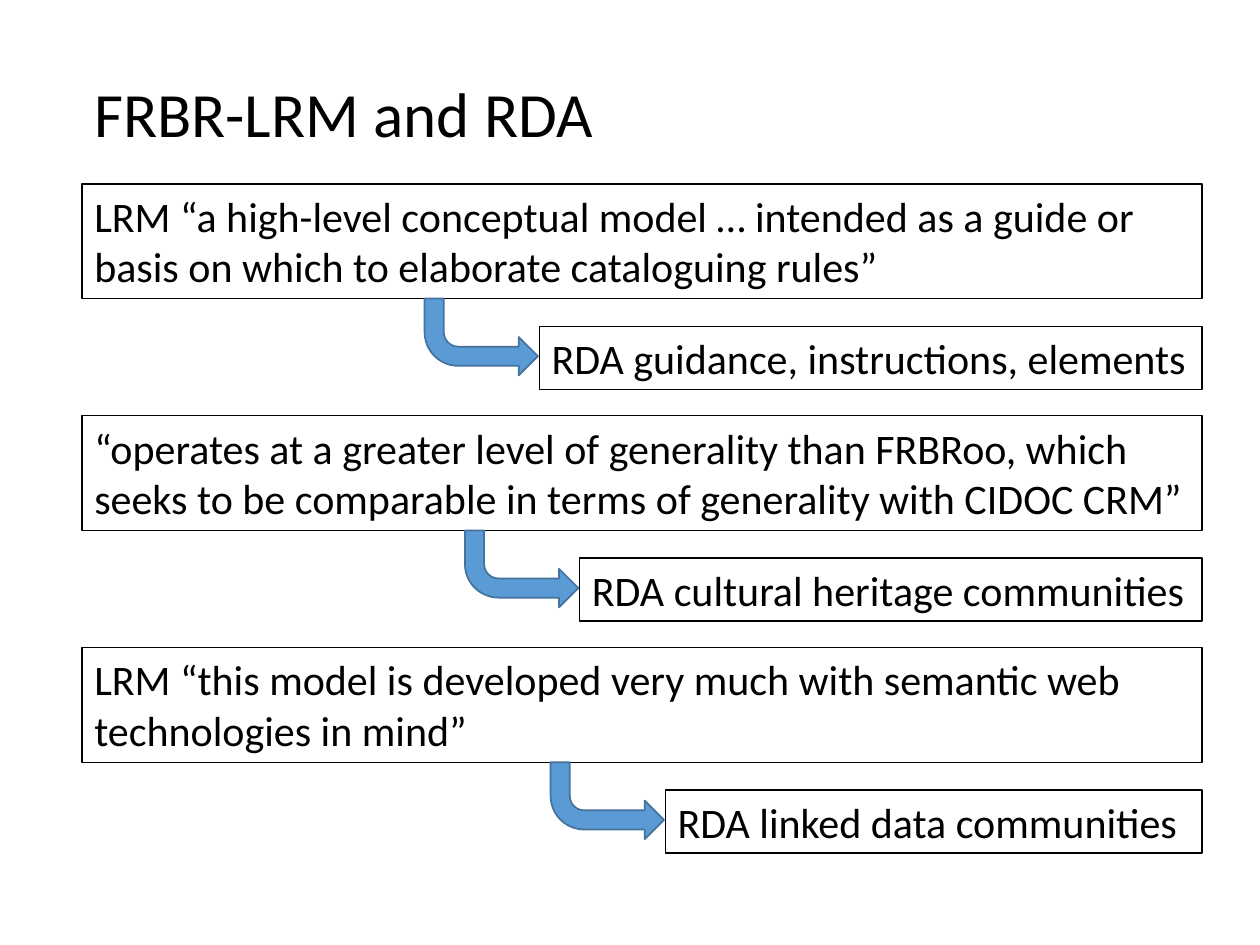
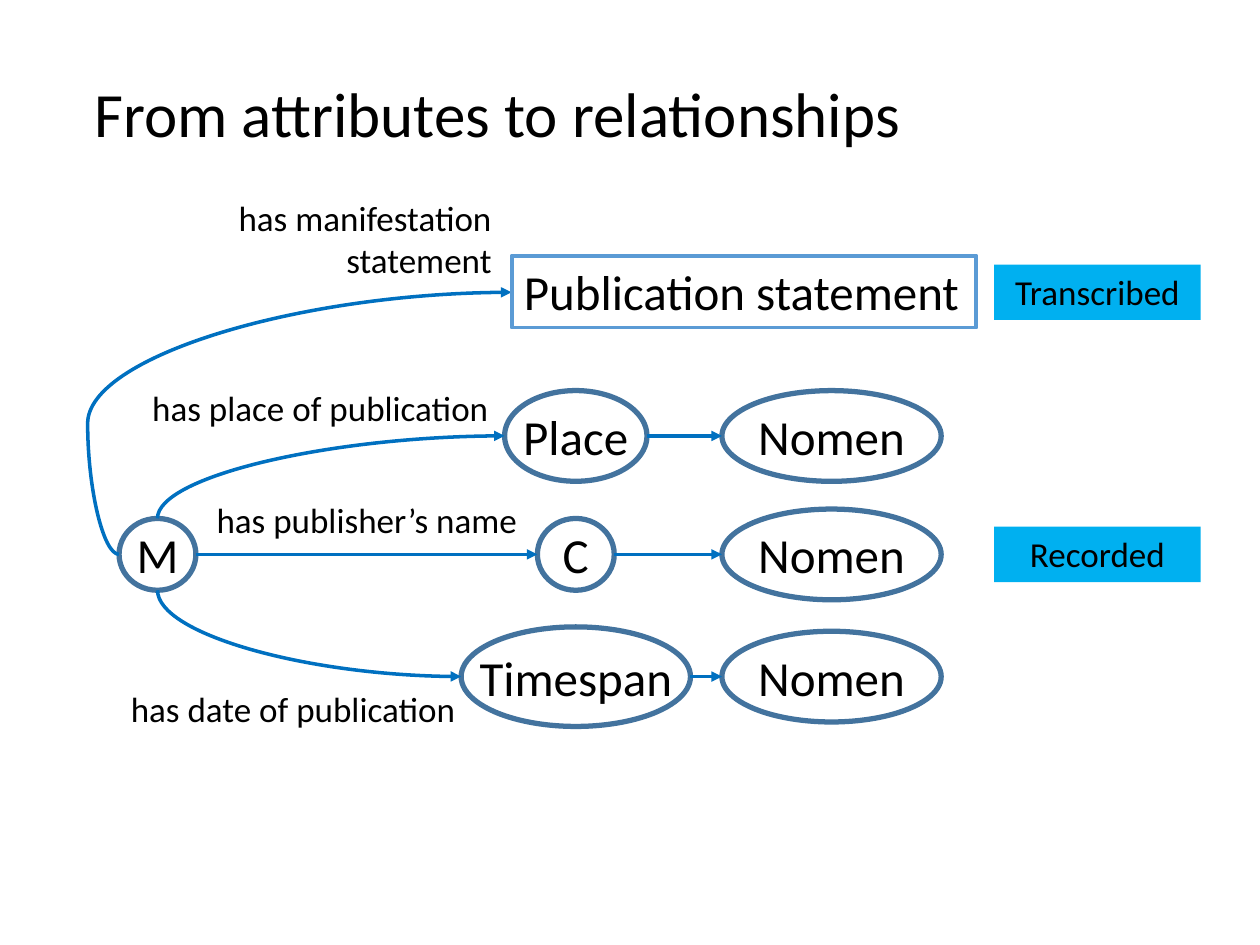
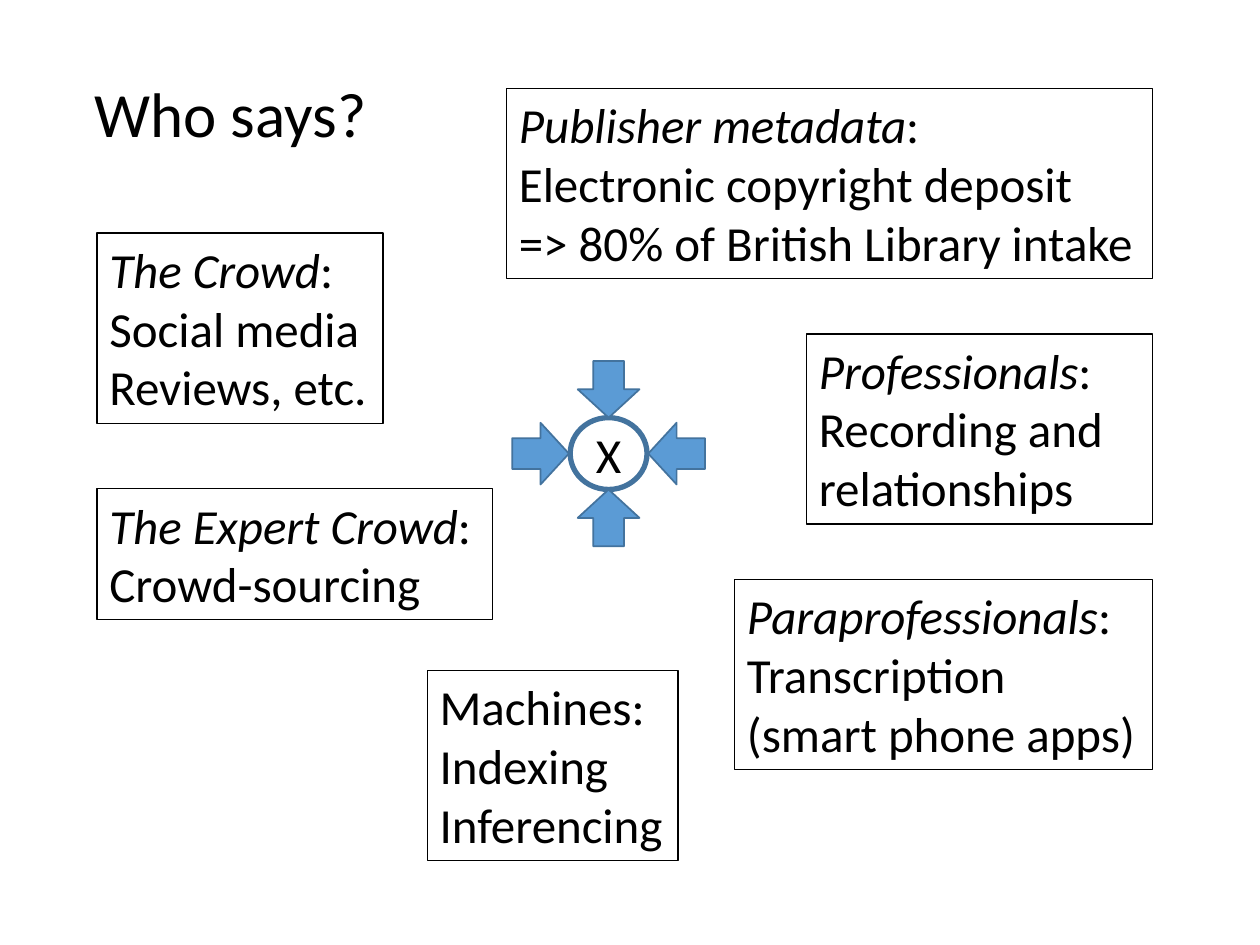
from dataclasses import dataclass

from pptx import Presentation
from pptx.dml.color import RGBColor
from pptx.enum.shapes import MSO_CONNECTOR, MSO_SHAPE
from pptx.enum.text import MSO_ANCHOR, MSO_AUTO_SIZE, PP_ALIGN
from pptx.oxml.ns import qn
from pptx.oxml.xmlchemy import OxmlElement
from pptx.util import Inches, Pt

RECT, OVAL = MSO_SHAPE.RECTANGLE, MSO_SHAPE.OVAL
BENT, ARROW = MSO_SHAPE.BENT_ARROW, MSO_SHAPE.RIGHT_ARROW
CURVE = MSO_CONNECTOR.CURVE
LEFT, CENTER, RIGHT = PP_ALIGN.LEFT, PP_ALIGN.CENTER, PP_ALIGN.RIGHT
TOP, MIDDLE = MSO_ANCHOR.TOP, MSO_ANCHOR.MIDDLE
GROW, FIXED = MSO_AUTO_SIZE.SHAPE_TO_FIT_TEXT, MSO_AUTO_SIZE.NONE


@dataclass(frozen=True)
class Theme:
    font: str = "Calibri"
    ink: str = "000000"
    blue: str = "5B9BD5"
    edge: str = "43739E"
    link: str = "0070C0"
    tag: str = "00B0F0"
    title: int = 36
    large: int = 28
    body: int = 24
    small: int = 20


T = Theme()

QUOTES = [
    ("LRM “a high-level conceptual model … intended as a guide or basis on which "
     "to elaborate cataloguing rules”",
     "RDA guidance, instructions, elements", 4.28),
    ("“operates at a greater level of generality than FRBRoo, which seeks to be "
     "comparable in terms of generality with CIDOC CRM”",
     "RDA cultural heritage communities", 4.6),
    ("LRM “this model is developed very much with semantic web technologies in mind”",
     "RDA linked data communities", 5.28),
]

NODES = [
    ("Place", 1.13, 0.72, 3.46),
    ("C", 0.61, 0.57, 4.4),
    ("Timespan", 1.82, 0.79, 5.37),
]
LABELS = [
    ("has manifestation\nstatement", (1.77, 1.51, 2.23, 0.77), RIGHT),
    ("has place of publication", (1.11, 3.02, 2.9, 0.44), LEFT),
    ("has publisher’s name", (1.62, 3.91, 2.61, 0.44), LEFT),
    ("has date of publication", (0.94, 5.41, 2.8, 0.44), LEFT),
]
TAGS = [("Transcribed", 2.1), ("Recorded", 4.18)]

VOICES = [
    ("Publisher metadata", ":\nElectronic copyright deposit\n=> 80% of British Library intake",
     (4.02, 0.7, 5.13, 1.51), False),
    ("The Crowd", ":\nSocial media\nReviews, etc.", (0.77, 1.85, 2.27, 1.51), False),
    ("The Expert Crowd", ":\nCrowd-sourcing", (0.77, 3.88, 3.14, 1.04), False),
    ("Paraprofessionals", ":\nTranscription\n(smart phone apps)",
     (5.83, 4.6, 3.32, 1.51), False),
    ("Professionals", ":\nRecording and relationships", (6.4, 2.65, 2.75, 1.51), True),
    ("", "Machines:\nIndexing\nInferencing", (3.39, 5.32, 1.99, 1.51), False),
]


def shape(slide, kind, at, fill=None, line=None, width=0.75):
    item = slide.shapes.add_shape(kind, *map(Inches, at))
    item.shadow.inherit = False
    if fill:
        item.fill.solid()
        item.fill.fore_color.rgb = RGBColor.from_string(fill)
    else:
        item.fill.background()
    if line:
        item.line.color.rgb = RGBColor.from_string(line)
        item.line.width = Pt(width)
    else:
        item.line.fill.background()
    return item


def write(item, text, size=T.body, lead="", align=LEFT, wrap=False, anchor=TOP, fit=GROW):
    frame = item.text_frame
    frame.word_wrap = wrap
    frame.auto_size = fit
    frame.vertical_anchor = anchor
    for i, row in enumerate(text.split("\n")):
        para = frame.paragraphs[0] if i == 0 else frame.add_paragraph()
        para.alignment = align
        parts = [(lead, True), (row, False)] if lead and i == 0 else [(row, False)]
        for words, slant in parts:
            run = para.add_run()
            run.text = words
            run.font.name = T.font
            run.font.size = Pt(size)
            run.font.italic = slant
            run.font.color.rgb = RGBColor.from_string(T.ink)


def label(slide, text, at, **form):
    write(slide.shapes.add_textbox(*map(Inches, at)), text, **form)


def node(slide, text, mid, y, w, h):
    item = shape(slide, OVAL, (mid - w / 2, y - h / 2, w, h), line=T.edge, width=3)
    write(item, text, size=T.large, align=CENTER, anchor=MIDDLE, fit=FIXED)


def link(slide, start, end, bend=None):
    line = slide.shapes.add_connector(CURVE, *map(Inches, start + end))
    line.line.color.rgb = RGBColor.from_string(T.link)
    line.line.width = Pt(2)
    props = line.element.spPr
    tip = OxmlElement("a:tailEnd")
    tip.set("type", "triangle")
    props.find(qn("a:ln")).append(tip)
    props.append(OxmlElement("a:effectLst"))
    if bend is not None:
        guide = OxmlElement("a:gd")
        guide.set("name", "adj1")
        guide.set("fmla", f"val {round(bend * 100000)}")
        props.find(qn("a:prstGeom")).get_or_add_avLst().append(guide)
    return line


def turn(slide, start, end):
    line = link(slide, start, end)
    (x1, y1), (x2, y2) = start, end
    wide, tall = abs(y2 - y1), abs(x2 - x1)
    line.left = Inches((x1 + x2 - wide) / 2)
    line.top = Inches((y1 + y2 - tall) / 2)
    line.width, line.height = Inches(wide), Inches(tall)
    up = y2 < y1
    frame = line.element.spPr.find(qn("a:xfrm"))
    frame.set("rot", str((90 if up else 270) * 60000))
    frame.set("flipH", "1")
    frame.set("flipV", "1" if up else "0")
    line.element.spPr.find(qn("a:prstGeom")).set("prst", "curvedConnector2")


def page(deck, title, width):
    slide = deck.slides.add_slide(deck.slide_layouts[6])
    label(slide, title, (0.65, 0.54, width, 0.71), size=T.title)
    return slide


def quotes(deck):
    slide = page(deck, "FRBR-LRM and RDA", 4.2)
    left, edge, tall = 0.65, 9.54, 0.91
    for i, (quote, reply, x) in enumerate(QUOTES):
        y = 1.46 + 1.84 * i
        box = shape(slide, RECT, (left, y, edge - left, tall), line=T.ink)
        write(box, quote, wrap=True)
        box = shape(slide, RECT, (x, y + 1.13, edge - x, 0.5), line=T.ink)
        write(box, reply, wrap=True)
        bent = shape(slide, BENT, (x - 0.91, y + tall, 0.9, 0.61),
                     fill=T.blue, line=T.edge, width=1)
        bent.element.spPr.find(qn("a:xfrm")).set("flipV", "1")


def links(deck):
    slide = page(deck, "From attributes to relationships", 6.67)
    hub, axis, far = 1.25, 4.4, 6.6
    wide, tall = 0.61, 0.57
    node(slide, "M", hub, axis, wide, tall)
    for text, w, h, y in NODES:
        mid = 4.57
        node(slide, text, mid, y, w, h)
        node(slide, "Nomen", far, y, 1.74, 0.72)
        link(slide, (mid + w / 2, y), (far - 0.87, y))
        end = (mid - w / 2, y)
        if y == axis:
            link(slide, (hub + wide / 2, axis), end)
        else:
            side = -1 if y < axis else 1
            turn(slide, (hub, axis + side * tall / 2), end)
    link(slide, (hub - wide / 2, axis), (4.06, 2.32), bend=-0.08)
    box = shape(slide, RECT, (4.06, 2.03, 3.69, 0.57), line=T.blue, width=2.25)
    write(box, "Publication statement", size=T.large)
    for text, at, align in LABELS:
        label(slide, text, at, size=T.small, align=align)
    for text, y in TAGS:
        box = shape(slide, RECT, (7.89, y, 1.64, 0.44), fill=T.tag)
        write(box, text, size=T.small, align=CENTER, wrap=True)


def voices(deck):
    slide = page(deck, "Who says?", 2.38)
    x, y, w, h = 4.83, 3.6, 0.45, 0.49
    node(slide, "X", x, y, 0.61, 0.57)
    for lead, text, at, wrap in VOICES:
        write(shape(slide, RECT, at, line=T.ink), text, size=T.large, lead=lead, wrap=wrap)
    for dx, dy, angle in [(-0.54, 0, 0), (0.54, 0, 180), (0, -0.51, 90), (0, 0.51, 270)]:
        arrow = shape(slide, ARROW, (x + dx - w / 2, y + dy - h / 2, w, h),
                      fill=T.blue, line=T.edge, width=1)
        arrow.rotation = angle


def main():
    deck = Presentation()
    deck.slide_width, deck.slide_height = Inches(10), Inches(7.5)
    quotes(deck)
    links(deck)
    voices(deck)
    deck.save("out.pptx")


if __name__ == "__main__":
    main()
